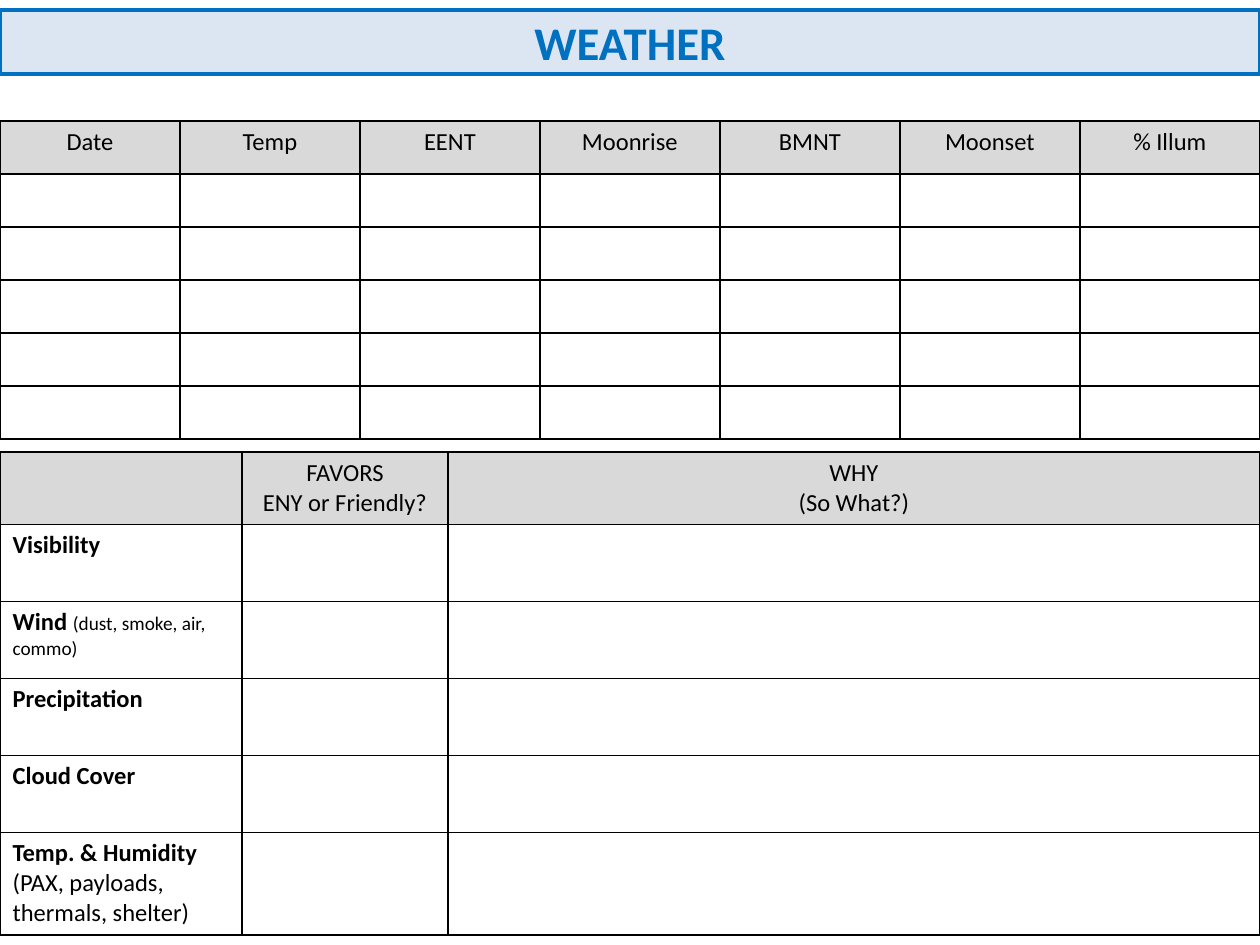
from lxml import etree
from pptx import Presentation
from pptx.dml.color import RGBColor
from pptx.enum.shapes import MSO_SHAPE
from pptx.enum.text import MSO_ANCHOR, PP_ALIGN
from pptx.oxml.ns import qn
from pptx.util import Emu, Pt

RECTANGLE = MSO_SHAPE.RECTANGLE
MIDDLE = MSO_ANCHOR.MIDDLE
CENTER, LEFT = PP_ALIGN.CENTER, PP_ALIGN.LEFT

WIDTH, HEIGHT = 1260, 945
EMU_PER_PX = 9144000 / WIDTH
FONT = "Calibri"
BODY_SIZE, NOTE_SIZE, TITLE_SIZE = 14, 11, 26.7
COLORS = {
    "text": "000000",
    "border": "000000",
    "header": "D9D9D9",
    "cell": "FFFFFF",
    "banner": "DCE6F2",
    "accent": "0070C0",
}

SKY_HEADERS = ["Date", "Temp", "EENT", "Moonrise", "BMNT", "Moonset", "% Illum"]
BLANK_DAYS = 5
EFFECT_HEADERS = [[], ["FAVORS", "ENY or Friendly?"], ["WHY", "(So What?)"]]
FACTORS = [
    [[("Visibility", BODY_SIZE, True)]],
    [[("Wind ", BODY_SIZE, True), ("(dust, smoke, air, commo)", NOTE_SIZE, False)]],
    [[("Precipitation", BODY_SIZE, True)]],
    [[("Cloud Cover", BODY_SIZE, True)]],
    [
        [("Temp. & Humidity", BODY_SIZE, True)],
        [("(PAX, payloads, thermals, shelter)", BODY_SIZE, False)],
    ],
]


def px(length):
    """Turn pixels into EMU."""
    return Emu(round(length * EMU_PER_PX))


def color(name):
    """Look up a named colour."""
    return RGBColor.from_string(COLORS[name])


def plain(lines):
    """Turn lines of text into paragraphs of one regular run each."""
    return [[(line, BODY_SIZE, False)] for line in lines]


class SlideBuilder:
    """Draws styled elements on the current slide."""

    def __init__(self, slide):
        self.slide = slide

    def set_text(self, text_frame, paragraphs, align, color_name="text"):
        """Fill a text frame with paragraphs of (text, size, bold) runs."""
        text_frame.word_wrap = True
        for index, runs in enumerate(paragraphs):
            paragraph = text_frame.add_paragraph() if index else text_frame.paragraphs[0]
            paragraph.alignment = align
            for text, size, bold in runs:
                run = paragraph.add_run()
                run.text = text
                run.font.name = FONT
                run.font.size = Pt(size)
                run.font.bold = bold
                run.font.color.rgb = color(color_name)

    def banner(self, text, left, top, width, height):
        """Add the title bar."""
        shape = self.slide.shapes.add_shape(
            RECTANGLE, px(left), px(top), px(width), px(height)
        )
        shape.shadow.inherit = False
        shape.fill.solid()
        shape.fill.fore_color.rgb = color("banner")
        shape.line.color.rgb = color("accent")
        shape.line.width = Pt(2)
        shape.text_frame.vertical_anchor = MIDDLE
        self.set_text(shape.text_frame, [[(text, TITLE_SIZE, True)]], CENTER, "accent")

    def border(self, cell):
        """Draw a thin line on all four sides of a cell."""
        properties = cell._tc.get_or_add_tcPr()
        for side in ("a:lnL", "a:lnR", "a:lnT", "a:lnB"):
            line = etree.SubElement(properties, qn(side), w=str(Pt(1)))
            fill = etree.SubElement(line, qn("a:solidFill"))
            etree.SubElement(fill, qn("a:srgbClr"), val=COLORS["border"])

    def table(self, top, column_widths, row_heights, rows):
        """Add a bordered table with a shaded, centred header row."""
        table = self.slide.shapes.add_table(
            len(row_heights), len(column_widths), px(0), px(top),
            px(sum(column_widths)), px(sum(row_heights)),
        ).table
        table.first_row = table.horz_banding = False
        for column, width in zip(table.columns, column_widths):
            column.width = px(width)
        for row_index, (row, height) in enumerate(zip(table.rows, row_heights)):
            row.height = px(height)
            is_header = row_index == 0
            for cell, paragraphs in zip(row.cells, rows[row_index]):
                self.border(cell)
                cell.fill.solid()
                cell.fill.fore_color.rgb = color("header" if is_header else "cell")
                self.set_text(cell.text_frame, paragraphs, CENTER if is_header else LEFT)


def main():
    """Build the weather slide."""
    presentation = Presentation()
    presentation.slide_width, presentation.slide_height = px(WIDTH), px(HEIGHT)
    builder = SlideBuilder(presentation.slides.add_slide(presentation.slide_layouts[6]))

    column_count = len(SKY_HEADERS)
    sky_rows = [[plain([header]) for header in SKY_HEADERS]]
    sky_rows += [[[]] * column_count] * BLANK_DAYS
    builder.table(
        121, [WIDTH // column_count] * column_count, [53] * len(sky_rows), sky_rows
    )

    effect_rows = [[plain(lines) for lines in EFFECT_HEADERS]]
    effect_rows += [[factor, [], []] for factor in FACTORS]
    builder.table(452, [242, 206, 812], [72, 77, 77, 77, 77, 103], effect_rows)

    builder.banner("WEATHER", 0, 10, WIDTH, 64)
    presentation.save("out.pptx")


if __name__ == "__main__":
    main()
